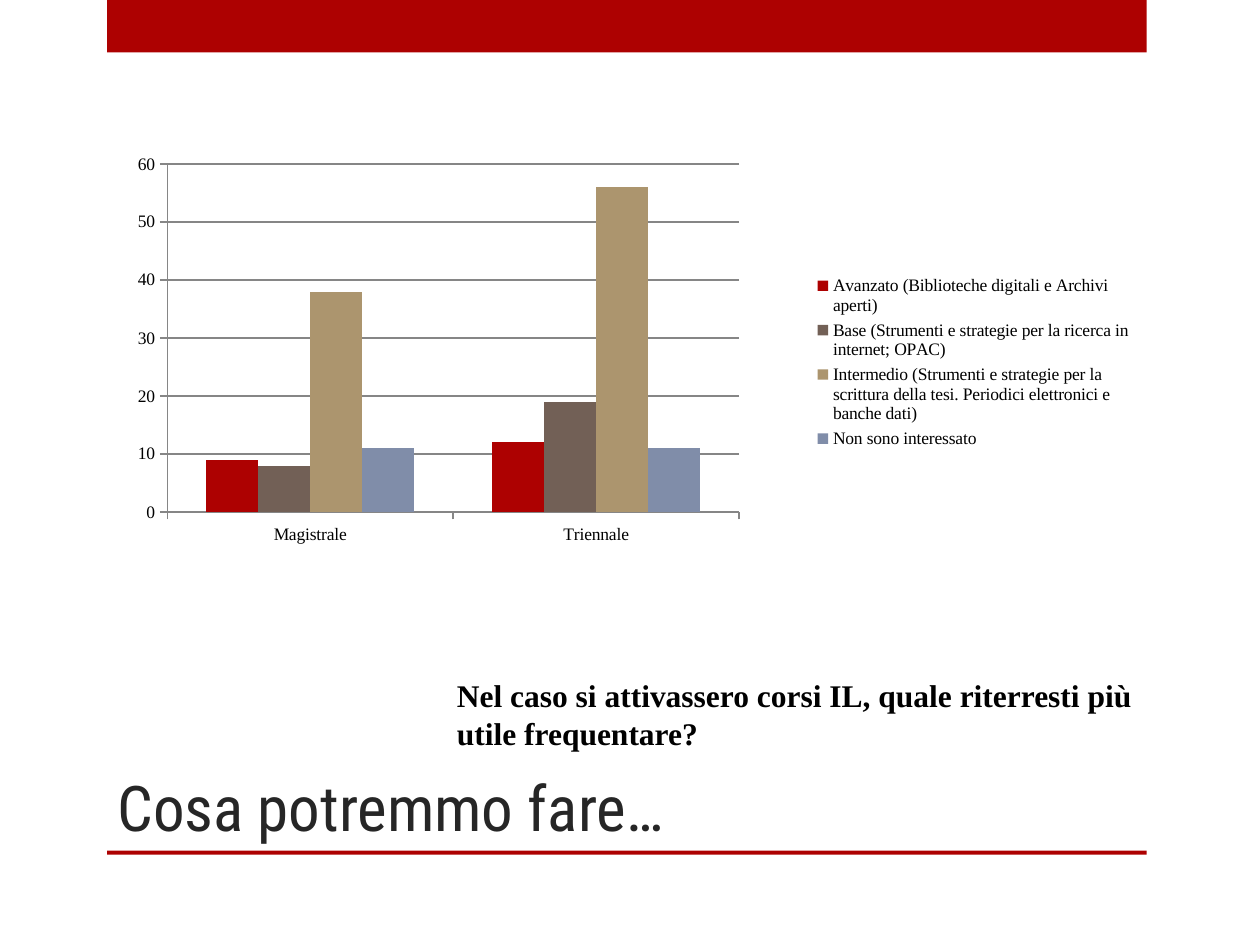
from dataclasses import dataclass

from lxml import etree
from pptx import Presentation
from pptx.chart import data as chart_data
from pptx.dml.color import RGBColor
from pptx.enum import chart as charts, shapes, text
from pptx.oxml import ns
from pptx.util import Pt


@dataclass(frozen=True)
class Theme:
    red: str = "AD0101"
    brown: str = "726056"
    sand: str = "AC956E"
    blue: str = "808DA9"
    grid: str = "868686"
    ink: str = "000000"
    heading: str = "262626"
    heading_font: str = "Roboto Condensed"
    body_font: str = "Times New Roman"
    heading_size: int = 36
    question_size: int = 18
    chart_size: int = 10


THEME = Theme()
LEVELS = ("Magistrale", "Triennale")
COURSES = (
    ("Avanzato (Biblioteche digitali e Archivi aperti)", (9, 12), THEME.red),
    ("Base (Strumenti e strategie per la ricerca in internet; OPAC)", (8, 19), THEME.brown),
    ("Intermedio (Strumenti e strategie per la scrittura della tesi. "
     "Periodici elettronici e banche dati)", (38, 56), THEME.sand),
    ("Non sono interessato", (11, 11), THEME.blue),
)


def color(value):
    return RGBColor.from_string(value)


def style_font(font, name, size, ink, bold=False):
    font.name, font.size, font.bold = name, Pt(size), bold
    font.color.rgb = color(ink)


def add_band(page, box):
    band = page.shapes.add_shape(shapes.MSO_SHAPE.RECTANGLE, *map(Pt, box))
    band.shadow.inherit = False
    band.fill.solid()
    band.fill.fore_color.rgb = color(THEME.red)
    band.line.fill.background()


def add_frame(page, box):
    """Red band along the top of the box and a thin rule along its bottom."""
    left, top, width, height = box
    rule = 2.4
    add_band(page, (left, top, width, 30))
    add_band(page, (left, top + height - rule, width, rule))


def add_text(page, box, words, anchor, *style):
    frame = page.shapes.add_textbox(*map(Pt, box)).text_frame
    frame.word_wrap = True
    frame.vertical_anchor = anchor
    span = frame.paragraphs[0].add_run()
    span.text = words
    style_font(span.font, *style)


def place_plot(chart, **fractions):
    """Fix the inner plot area as fractions of the chart box."""
    area = chart._chartSpace.chart.plotArea
    for old in area.findall(ns.qn("c:layout")):
        area.remove(old)
    layout = etree.Element(ns.qn("c:layout"))
    manual = etree.SubElement(layout, ns.qn("c:manualLayout"))
    settings = {"layoutTarget": "inner", "xMode": "edge", "yMode": "edge", **fractions}
    for tag, value in settings.items():
        etree.SubElement(manual, ns.qn(f"c:{tag}")).set("val", str(value))
    area.insert(0, layout)


def add_course_chart(page, box):
    answers = chart_data.CategoryChartData()
    answers.categories = LEVELS
    for name, values, _ in COURSES:
        answers.add_series(name, values)
    chart = page.shapes.add_chart(
        charts.XL_CHART_TYPE.COLUMN_CLUSTERED, *map(Pt, box), answers).chart
    style_font(chart.font, THEME.body_font, THEME.chart_size, THEME.ink)
    chart.has_title = False

    # Columns
    plot = chart.plots[0]
    plot.vary_by_categories = False
    plot.gap_width, plot.overlap = 150, 0
    for series, (_, _, fill) in zip(plot.series, COURSES):
        series.format.fill.solid()
        series.format.fill.fore_color.rgb = color(fill)
    place_plot(chart, x=0.06, y=0.13, w=0.55, h=0.65)

    # Axes and gridlines
    scale = chart.value_axis
    scale.minimum_scale, scale.maximum_scale, scale.major_unit = 0, 60, 10
    scale.has_major_gridlines = True
    for axis in (chart.category_axis, scale):
        axis.major_tick_mark = charts.XL_TICK_MARK.OUTSIDE
    for part in (chart.category_axis, scale, scale.major_gridlines):
        part.format.line.color.rgb = color(THEME.grid)
        part.format.line.width = Pt(1)

    # Legend
    chart.has_legend = True
    chart.legend.position = charts.XL_LEGEND_POSITION.RIGHT
    chart.legend.include_in_layout = False


def main():
    deck = Presentation()
    deck.slide_width, deck.slide_height = Pt(720), Pt(540)
    page = deck.slides.add_slide(deck.slide_layouts[6])

    add_frame(page, (61.2, 0, 594, 488.4))
    add_text(page, (60, 423.4, 534, 62.6), "Cosa potremmo fare…",
             text.MSO_ANCHOR.BOTTOM,
             THEME.heading_font, THEME.heading_size, THEME.heading)
    add_text(page, (254, 383, 414, 51),
             "Nel caso si attivassero corsi IL, quale riterresti più utile frequentare?",
             text.MSO_ANCHOR.TOP,
             THEME.body_font, THEME.question_size, THEME.ink, True)
    add_course_chart(page, (60, 54, 594, 306))

    deck.save("out.pptx")


if __name__ == "__main__":
    main()
